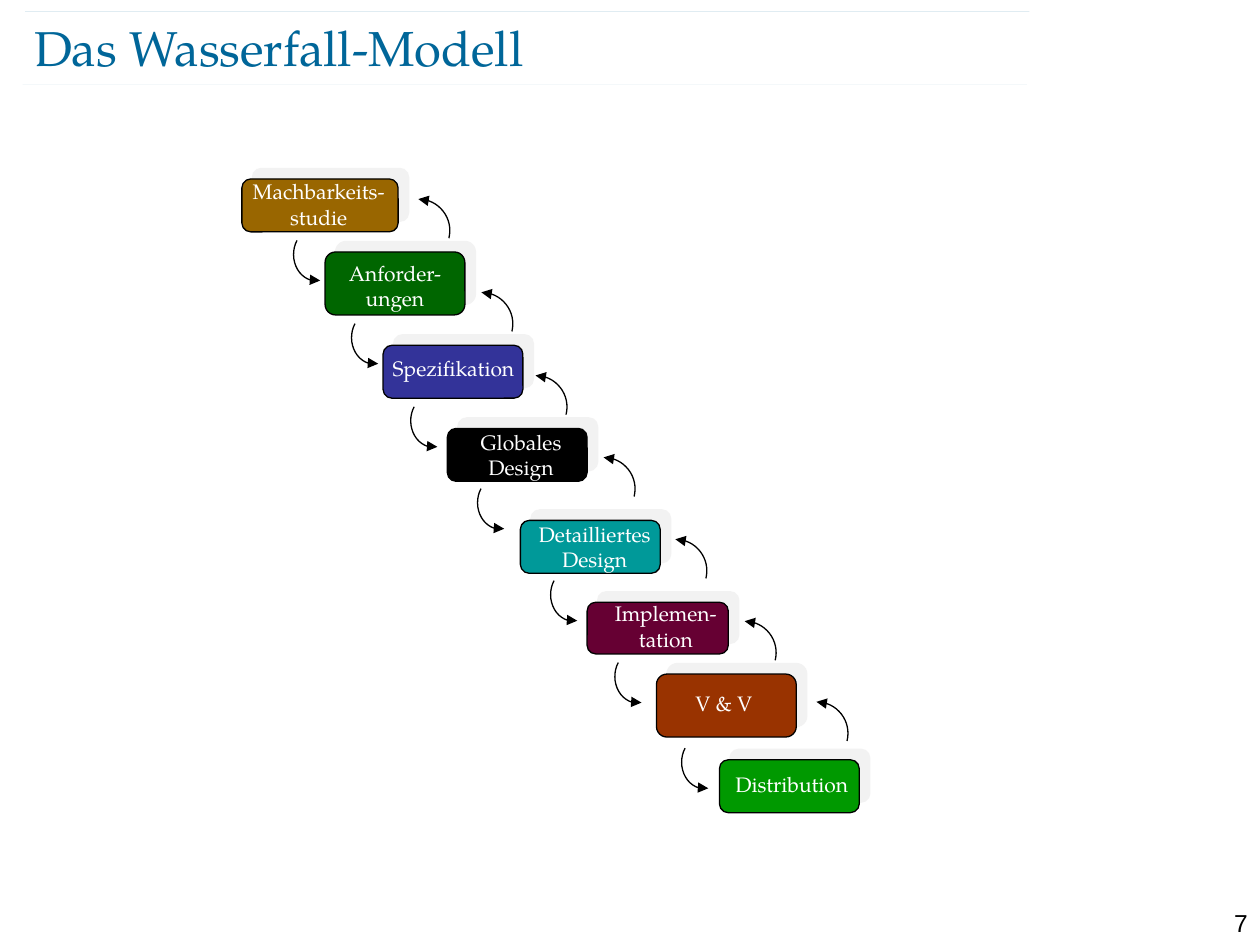
from math import cos, radians, sin

from lxml.etree import SubElement
from pptx import Presentation
from pptx.dml.color import RGBColor
from pptx.enum.shapes import MSO_CONNECTOR as Connector, MSO_SHAPE as Shape
from pptx.enum.text import MSO_ANCHOR as Anchor, PP_ALIGN as Align
from pptx.oxml.ns import qn
from pptx.util import Inches, Pt

SERIF = "TeX Gyre Pagella"


def color(value):
    return RGBColor.from_string(value)


def add_text(text, area, size, font, hue, align, inset=0, anchor=Anchor.TOP):
    box = page.shapes.add_textbox(*map(Inches, area))
    frame = box.text_frame
    frame.word_wrap = True
    frame.vertical_anchor = anchor
    frame.margin_left = frame.margin_right = Inches(inset)
    frame.margin_top = frame.margin_bottom = Inches(inset / 2)
    para = frame.paragraphs[0]
    para.text = text
    para.alignment = align
    para.font.size = Pt(size)
    para.font.name = font
    para.font.color.rgb = color(hue)


deck = Presentation()
deck.slide_width = Inches(10)
deck.slide_height = Inches(7.5)
page = deck.slides.add_slide(deck.slide_layouts[6])

for left, top in [(0.18, 0.67), (0.2, 0.09)]:
    rule = page.shapes.add_connector(
        Connector.STRAIGHT, Inches(left), Inches(top), Inches(left + 7.97), Inches(top)
    )
    rule.line.width = Pt(0.1)
    rule.line.color.rgb = color("006699")
    tint = rule._element.spPr.find(".//" + qn("a:srgbClr"))
    SubElement(tint, qn("a:alpha"), val="35000")
    SubElement(rule._element.spPr, qn("a:effectLst"))

add_text("7", (9.45, 7.16, 0.55, 0.24), 14, "Arial", "000000", Align.RIGHT, 0.1)
add_text("Das Wasserfall-Modell", (0.27, 0.13, 8.69, 0.48), 28, SERIF, "006699",
         Align.LEFT, anchor=Anchor.MIDDLE)

phases = [
    ("Machbarkeits-studie", "996600", (1.92, 1.42, 1.24, 0.42), (1.95, 1.42, 1.16, 0.4)),
    ("Anforder-ungen", "006600", (2.58, 2, 1.11, 0.5), (2.6, 2.07, 1.07, 0.4)),
    ("Spezifikation", "333399", (3.04, 2.74, 1.11, 0.42), (3.08, 2.82, 1.04, 0.2)),
    ("Globales Design", "000000", (3.55, 3.4, 1.11, 0.42), (3.64, 3.41, 0.99, 0.4)),
    ("Detailliertes Design", "009999", (4.13, 4.13, 1.11, 0.42), (4.2, 4.14, 1.04, 0.4)),
    ("Implemen-\ntation", "660033", (4.66, 4.78, 1.12, 0.41), (4.67, 4.77, 1.23, 0.4)),
    ("V & V", "993300", (5.21, 5.35, 1.11, 0.5), (5.25, 5.48, 0.99, 0.2)),
    ("Distribution", "009900", (5.71, 6.03, 1.11, 0.42), (5.63, 6.12, 1.31, 0.2)),
]
for name, fill, area, text_area in phases:
    phase = page.shapes.add_shape(Shape.ROUNDED_RECTANGLE, *map(Inches, area))
    phase.adjustments[0] = 0.167
    phase.fill.solid()
    phase.fill.fore_color.rgb = color(fill)
    phase.line.color.rgb = color("000000")
    phase.line.width = Pt(0.75)
    phase.shadow.inherit = False
    effects = phase._element.spPr.find(qn("a:effectLst"))
    shadow = SubElement(effects, qn("a:outerShdw"), dist=str(Pt(8.5)),
                        dir="18900000", algn="ctr", rotWithShape="0")
    shade = SubElement(shadow, qn("a:srgbClr"), val="E7E6E6")
    SubElement(shade, qn("a:alpha"), val="50000")
    add_text(name, text_area, 12, SERIF, "FFFFFF", Align.CENTER)

down_centers = [(2.51, 2.02), (2.97, 2.68), (3.44, 3.34), (3.97, 3.99),
                (4.55, 4.72), (5.06, 5.37), (5.59, 6.05)]
up_centers = [(3.32, 1.83), (3.82, 2.57), (4.25, 3.23), (4.79, 3.88),
              (5.36, 4.53), (5.91, 5.18), (6.48, 5.82)]
steps = 16
for centers, radius_x, radius_y, start, end in [
    (down_centers, 0.18, 0.21, 212, 80),
    (up_centers, 0.25, 0.25, 14, -90),
]:
    angles = [radians(start + (end - start) * step / steps) for step in range(steps + 1)]
    for center_x, center_y in centers:
        points = [
            (Inches(center_x + radius_x * cos(angle)), Inches(center_y + radius_y * sin(angle)))
            for angle in angles
        ]
        builder = page.shapes.build_freeform(*points[0])
        builder.add_line_segments(points[1:], close=False)
        arrow = builder.convert_to_shape()
        arrow.fill.background()
        arrow.line.color.rgb = color("000000")
        arrow.line.width = Pt(0.75)
        arrow.shadow.inherit = False
        SubElement(arrow._element.spPr.find(qn("a:ln")), qn("a:tailEnd"), type="triangle")

deck.save("out.pptx")
